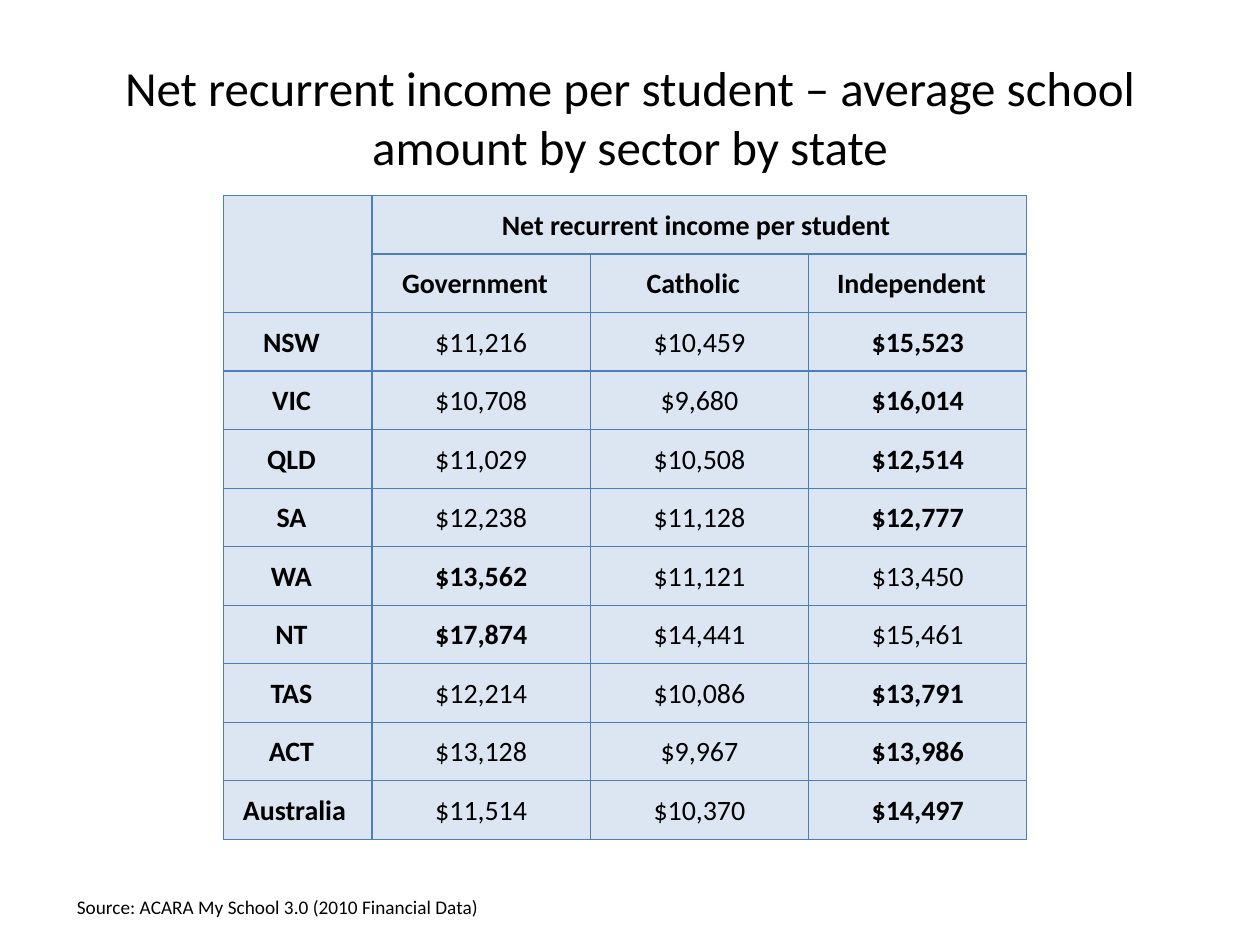
"""Build a slide with a table of school income per student by state and sector."""
from typing import NamedTuple

from lxml.etree import fromstring
from pptx import Presentation
from pptx.dml.color import RGBColor as Rgb
from pptx.enum.text import MSO_ANCHOR as Anchor, PP_ALIGN as Align
from pptx.util import Cm, Pt

BLACK, CELL_FILL, BORDER = "000000", "DCE6F2", "4B7EBC"
NAMESPACE = "http://schemas.openxmlformats.org/drawingml/2006/main"
SECTORS = ("Government", "Catholic", "Independent")
FIRST_COLUMN, SECTOR_COLUMN, ROW_HEIGHT = 3, 4.4, 1.18
INSET, LABEL_INSET, WIDE_LABEL_INSET = 0.03, 0.16, 0.28


class StateIncome(NamedTuple):
    state: str
    amounts: tuple[int, int, int]


INCOMES = (
    StateIncome("NSW", (11216, 10459, 15523)),
    StateIncome("VIC", (10708, 9680, 16014)),
    StateIncome("QLD", (11029, 10508, 12514)),
    StateIncome("SA", (12238, 11128, 12777)),
    StateIncome("WA", (13562, 11121, 13450)),
    StateIncome("NT", (17874, 14441, 15461)),
    StateIncome("TAS", (12214, 10086, 13791)),
    StateIncome("ACT", (13128, 9967, 13986)),
    StateIncome("Australia", (11514, 10370, 14497)),
)


def color(value: str) -> Rgb:
    return Rgb.from_string(value)


def write(frame, text: str, *, size: float, bold: bool = False, align=Align.LEFT) -> None:
    paragraph = frame.paragraphs[0]
    paragraph.alignment = align
    run = paragraph.add_run()
    run.text = text
    run.font.name = "Calibri"
    run.font.size = Pt(size)
    run.font.bold = bold
    run.font.color.rgb = color(BLACK)


def style_cell(cell) -> None:
    cell.fill.solid()
    cell.fill.fore_color.rgb = color(CELL_FILL)
    properties = cell._tc.get_or_add_tcPr()
    for index, side in enumerate(("lnL", "lnR", "lnT", "lnB")):
        properties.insert(index, fromstring(
            f'<a:{side} xmlns:a="{NAMESPACE}" w="{Pt(0.75)}"><a:solidFill>'
            f'<a:srgbClr val="{BORDER}"/></a:solidFill></a:{side}>'))


def write_cell(cell, text: str, *, bold: bool = True, right: float = INSET) -> None:
    cell.vertical_anchor = Anchor.MIDDLE
    cell.margin_left = cell.margin_top = Cm(INSET)
    cell.margin_right, cell.margin_bottom = Cm(right), 0
    write(cell.text_frame, text, size=16, bold=bold, align=Align.CENTER)


def add_title(slide) -> None:
    title = slide.shapes.title
    title.left, title.top, title.width, title.height = Cm(1.27), Cm(0.76), Cm(22.86), Cm(3.18)
    title.text_frame.vertical_anchor = Anchor.MIDDLE
    write(title.text_frame,
          "Net recurrent income per student – average school amount by sector by state",
          size=28, align=Align.CENTER)


def add_source(slide) -> None:
    box = slide.shapes.add_textbox(Cm(1.3), Cm(17.93), Cm(19.8), Cm(0.73))
    box.text_frame.word_wrap = True
    write(box.text_frame, "Source: ACARA My School 3.0 (2010 Financial Data)", size=11)


def add_income_table(slide) -> None:
    row_count, column_count = len(INCOMES) + 2, len(SECTORS) + 1
    width = FIRST_COLUMN + SECTOR_COLUMN * len(SECTORS)
    table = slide.shapes.add_table(row_count, column_count, Cm(4.5), Cm(3.94),
                                   Cm(width), Cm(ROW_HEIGHT * row_count)).table
    table.first_row = table.horz_banding = False
    for index, column in enumerate(table.columns):
        column.width = Cm(SECTOR_COLUMN if index else FIRST_COLUMN)
    for row in table.rows:
        row.height = Cm(ROW_HEIGHT)
    for cell in table.iter_cells():
        style_cell(cell)

    table.cell(0, 0).merge(table.cell(1, 0))
    table.cell(0, 1).merge(table.cell(0, column_count - 1))
    write_cell(table.cell(0, 1), "Net recurrent income per student", right=LABEL_INSET)
    for column, sector in enumerate(SECTORS, start=1):
        write_cell(table.cell(1, column), sector, right=WIDE_LABEL_INSET)
    for row, income in enumerate(INCOMES, start=2):
        inset = LABEL_INSET if income.state == "Australia" else WIDE_LABEL_INSET
        write_cell(table.cell(row, 0), income.state, right=inset)
        for column, amount in enumerate(income.amounts, start=1):
            write_cell(table.cell(row, column), f"${amount:,}",
                       bold=amount == max(income.amounts))


def main() -> None:
    presentation = Presentation()
    presentation.slide_width, presentation.slide_height = Cm(25.4), Cm(19.05)
    slide = presentation.slides.add_slide(presentation.slide_layouts.get_by_name("Title Only"))
    add_title(slide)
    add_source(slide)
    add_income_table(slide)
    presentation.save("out.pptx")


if __name__ == "__main__":
    main()
